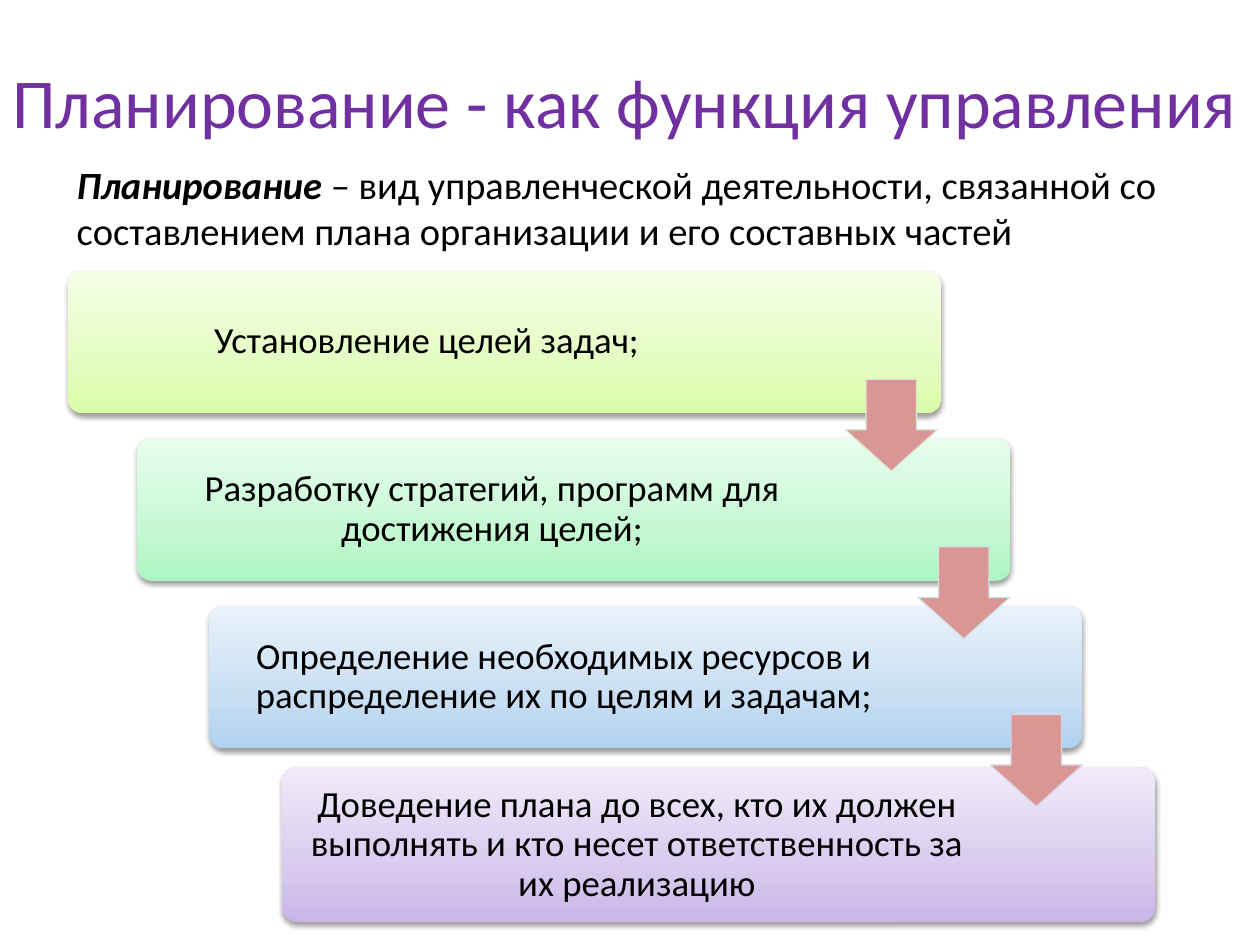
from lxml import etree
from pptx import Presentation
from pptx.dml.color import RGBColor
from pptx.enum.shapes import MSO_SHAPE
from pptx.enum.text import MSO_ANCHOR, PP_ALIGN
from pptx.oxml.ns import qn
from pptx.util import Inches, Pt

CARD, ARROW = MSO_SHAPE.ROUNDED_RECTANGLE, MSO_SHAPE.DOWN_ARROW
MIDDLE, TOP = MSO_ANCHOR.MIDDLE, MSO_ANCHOR.TOP
CENTER, LEFT = PP_ALIGN.CENTER, PP_ALIGN.LEFT
FONT = "Calibri"

COLORS = {"title": "7030A0", "text": "000000", "shadow": "000000", "arrow": "D99694"}
GRADIENT_POSITIONS = (0, 35, 100)

CARD_WIDTH, CARD_HEIGHT, LAST_HEIGHT = 6.93, 1.13, 1.23
LABEL_WIDTH = 5.63
ARROW_SIZE = 0.73
ARROW_LEFT, ARROW_TOP = 6.71, 3.01
ARROW_STEP_X, ROW_STEP = 0.575, 1.33

# left, top, height, label width, gradient from bottom to top, label
STEPS = [
    (0.54, 2.15, CARD_HEIGHT, 5.69, ("DAFDA7", "E4FCC2", "F5FFE7"),
     "Установление целей задач;"),
    (1.09, 2.15 + ROW_STEP, CARD_HEIGHT, LABEL_WIDTH, ("ACF6C1", "C5F8D3", "E8FDEE"),
     "Разработку стратегий, программ для достижения целей;"),
    (1.66, 2.15 + 2 * ROW_STEP, CARD_HEIGHT, LABEL_WIDTH, ("B0D1EF", "C8DEF3", "E9F2FB"),
     "Определение необходимых ресурсов и распределение их по целям и задачам;"),
    (2.24, 6.09, LAST_HEIGHT, LABEL_WIDTH, ("C9B5E8", "D8CBEE", "F0EAF9"),
     "Доведение плана до всех, кто их должен выполнять и кто несет "
     "ответственность за их реализацию"),
]
ARROW_OUTLINES = ("DEE7D1", "D2E3E2", "D8D3E0")


def rgb(value):
    return RGBColor.from_string(value)


def add_color(parent, value, opacity=None):
    color = etree.SubElement(parent, qn("a:srgbClr"), val=value)
    if opacity is not None:
        etree.SubElement(color, qn("a:alpha"), val=str(opacity * 1000))


def add_text(slide, box, runs, size, color, anchor=TOP, align=LEFT, inset=None):
    """Add a one-paragraph text box; runs are (text, emphasised) pairs."""
    frame = slide.shapes.add_textbox(*map(Inches, box)).text_frame
    frame.word_wrap = True
    frame.vertical_anchor = anchor
    if inset is not None:
        frame.margin_left = frame.margin_right = Inches(inset)
        frame.margin_top = frame.margin_bottom = Inches(inset)
    paragraph = frame.paragraphs[0]
    paragraph.alignment = align
    paragraph.font.name = FONT
    paragraph.font.size = Pt(size)
    paragraph.font.color.rgb = rgb(color)
    for text, emphasised in runs:
        run = paragraph.add_run()
        run.text = text
        if emphasised:
            run.font.bold = run.font.italic = True
    return paragraph


def apply_gradient(card, colors):
    """Fill the card with colour stops that run from its bottom to its top."""
    card.fill.gradient()
    card.fill.gradient_angle = 90
    stops = card._element.spPr.find(qn("a:gradFill")).find(qn("a:gsLst"))
    for stop in list(stops):
        stops.remove(stop)
    for position, color in zip(GRADIENT_POSITIONS, colors):
        stop = etree.SubElement(stops, qn("a:gs"), pos=str(position * 1000))
        add_color(stop, color)


def apply_shadow(card):
    card.shadow.inherit = False
    effects = card._element.spPr.find(qn("a:effectLst"))
    shadow = etree.SubElement(
        effects, qn("a:outerShdw"), blurRad=str(Pt(3.1)), dist=str(Pt(1.6)),
        dir=str(90 * 60000), rotWithShape="0")
    add_color(shadow, COLORS["shadow"], 38)


def add_step(slide, left, top, height, label_width, colors, label):
    card = slide.shapes.add_shape(
        CARD, *map(Inches, (left, top, CARD_WIDTH, height)))
    card.adjustments[0] = 0.1
    apply_gradient(card, colors)
    card.line.fill.background()
    apply_shadow(card)
    paragraph = add_text(slide, (left, top, label_width, height), [(label, False)],
                         21, COLORS["text"], MIDDLE, CENTER, 0.09)
    paragraph.line_spacing = 0.9


def add_arrow(slide, index, outline):
    left = ARROW_LEFT + index * ARROW_STEP_X
    top = ARROW_TOP + index * ROW_STEP
    arrow = slide.shapes.add_shape(
        ARROW, *map(Inches, (left, top, ARROW_SIZE, ARROW_SIZE)))
    arrow.adjustments[0], arrow.adjustments[1] = 0.55, 0.45
    arrow.shadow.inherit = False
    arrow.fill.solid()
    arrow.fill.fore_color.rgb = rgb(COLORS["arrow"])
    arrow.line.color.rgb = rgb(outline)
    arrow.line.width = Pt(0.75)


def main():
    deck = Presentation()
    deck.slide_width, deck.slide_height = Inches(10), Inches(7.5)
    slide = deck.slides.add_slide(deck.slide_layouts[6])

    add_text(slide, (0, 0.36, 12.36, 0.87),
             [("Планирование - как функция управления", False)],
             40, COLORS["title"], MIDDLE)
    add_text(slide, (0.51, 1.23, 8.82, 0.84),
             [("Планирование ", True),
              ("– вид управленческой деятельности, связанной со составлением "
               "плана организации и его составных частей", False)],
             22, COLORS["text"])
    for step in STEPS:
        add_step(slide, *step)
    for index, outline in enumerate(ARROW_OUTLINES):
        add_arrow(slide, index, outline)

    deck.save("out.pptx")


if __name__ == "__main__":
    main()
